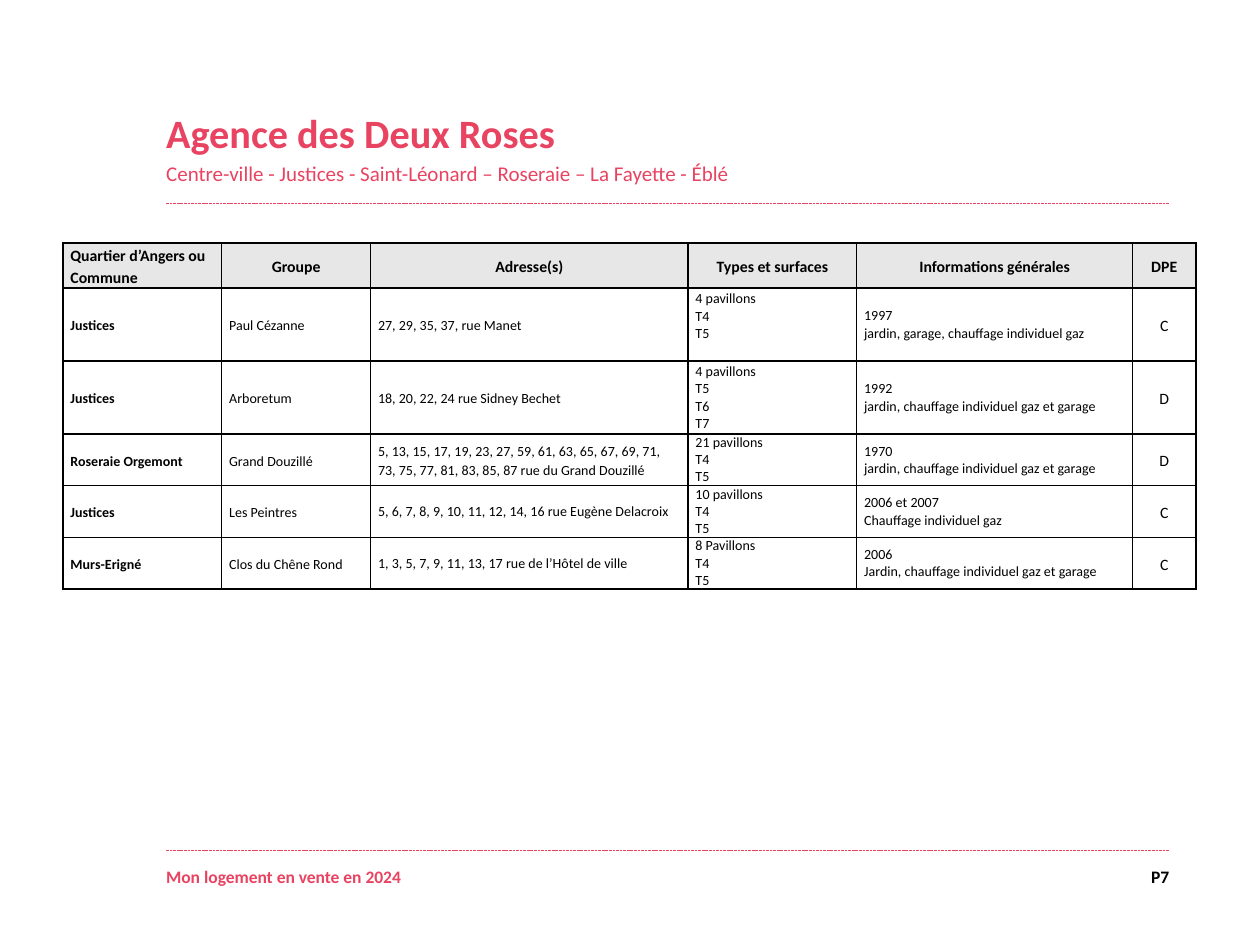
import dataclasses

import lxml.etree
import pptx
import pptx.dml.color
import pptx.enum.dml
import pptx.enum.shapes
import pptx.enum.text
import pptx.oxml.ns
import pptx.util

Cm = pptx.util.Cm
Pt = pptx.util.Pt
Align = pptx.enum.text.PP_ALIGN
Anchor = pptx.enum.text.MSO_ANCHOR


@dataclasses.dataclass(frozen=True)
class Theme:
    font: str = "Calibri"
    accent: str = "E94362"
    ink: str = "000000"
    header_fill: str = "E7E7E7"
    title_size: float = 23
    subtitle_size: float = 12
    footer_size: float = 10
    header_size: float = 9
    cell_size: float = 8
    rule_width: float = 0.5
    border_width: float = 1


LEFT, RIGHT = 3.35, 23.57
FOOTER_TOP, FOOTER_HEIGHT = 17.45, 0.51
PAGE_NUMBER_WIDTH = 0.86
LINE_HEIGHT = 0.34

HEADERS = ["Quartier d’Angers ou Commune", "Groupe", "Adresse(s)",
           "Types et surfaces", "Informations générales", "DPE"]
HOUSING = [
    ["Justices", "Paul Cézanne", "27, 29, 35, 37, rue Manet",
     "4 pavillons\nT4\nT5", "1997\njardin, garage, chauffage individuel gaz", "C"],
    ["Justices", "Arboretum", "18, 20, 22, 24 rue Sidney Bechet",
     "4 pavillons\nT5\nT6\nT7", "1992\njardin, chauffage individuel gaz et garage", "D"],
    ["Roseraie Orgemont", "Grand Douzillé",
     "5, 13, 15, 17, 19, 23, 27, 59, 61, 63, 65, 67, 69, 71, "
     "73, 75, 77, 81, 83, 85, 87 rue du Grand Douzillé",
     "21 pavillons\nT4\nT5", "1970\njardin, chauffage individuel gaz et garage", "D"],
    ["Justices", "Les Peintres", "5, 6, 7, 8, 9, 10, 11, 12, 14, 16 rue Eugène Delacroix",
     "10 pavillons\nT4\nT5", "2006 et 2007\nChauffage individuel gaz", "C"],
    ["Murs-Erigné", "Clos du Chêne Rond", "1, 3, 5, 7, 9, 11, 13, 17 rue de l’Hôtel de ville",
     "8 Pavillons\nT4\nT5", "2006\nJardin, chauffage individuel gaz et garage", "C"],
]
COLUMN_WIDTHS = [3.2, 3, 6.4, 3.4, 5.56, 1.28]
ROW_HEIGHTS = [0.91, 1.47, 1.47, 0.81, 0.81, 0.81]
TYPES_COLUMN, DPE_COLUMN = 3, 5


class SlideBuilder:
    def __init__(self, slide, theme):
        self.slide = slide
        self.theme = theme

    def style(self, para, size, color, bold=False, align=Align.LEFT, spacing=1.0):
        para.alignment = align
        para.line_spacing = spacing
        para.font.name = self.theme.font
        para.font.size = Pt(size)
        para.font.bold = bold
        para.font.color.rgb = pptx.dml.color.RGBColor.from_string(color)

    def place(self, shape, left, top, width, height, anchor=Anchor.TOP):
        shape.left, shape.top = Cm(left), Cm(top)
        shape.width, shape.height = Cm(width), Cm(height)
        frame = shape.text_frame
        frame.margin_left = frame.margin_right = 0
        frame.margin_top = frame.margin_bottom = 0
        frame.word_wrap = True
        frame.auto_size = pptx.enum.text.MSO_AUTO_SIZE.NONE
        frame.vertical_anchor = anchor
        return frame

    def heading(self, title, subtitle):
        frame = self.place(self.slide.shapes.title, LEFT, 1.85, 15.85, 1.9, Anchor.BOTTOM)
        frame.text = f"{title}\n{subtitle}"
        title_para, subtitle_para = frame.paragraphs
        self.style(title_para, self.theme.title_size, self.theme.accent, bold=True)
        self.style(subtitle_para, self.theme.subtitle_size, self.theme.accent)
        subtitle_para.space_before = Pt(2.4)

    def footer(self, text):
        width = RIGHT - LEFT - PAGE_NUMBER_WIDTH
        frame = self.place(self.slide.placeholders[1], LEFT, FOOTER_TOP, width, FOOTER_HEIGHT)
        frame.text = text
        para = frame.paragraphs[0]
        properties = para._p.get_or_add_pPr()
        properties.set("marL", "0")
        properties.set("indent", "0")
        lxml.etree.SubElement(properties, pptx.oxml.ns.qn("a:buNone"))
        para.space_before = Pt(0)
        self.style(para, self.theme.footer_size, self.theme.accent, bold=True)

    def page_number(self, text):
        box = self.slide.shapes.add_textbox(0, 0, 0, 0)
        frame = self.place(box, RIGHT - PAGE_NUMBER_WIDTH, FOOTER_TOP,
                           PAGE_NUMBER_WIDTH, FOOTER_HEIGHT)
        frame.text = text
        self.style(frame.paragraphs[0], self.theme.footer_size, self.theme.ink,
                   bold=True, align=Align.RIGHT)

    def dashed_rule(self, top):
        rule = self.slide.shapes.add_connector(
            pptx.enum.shapes.MSO_CONNECTOR.STRAIGHT, Cm(LEFT), Cm(top), Cm(RIGHT), Cm(top))
        rule.line.color.rgb = pptx.dml.color.RGBColor.from_string(self.theme.accent)
        rule.line.width = Pt(self.theme.rule_width)
        rule.line.dash_style = pptx.enum.dml.MSO_LINE.SQUARE_DOT
        lxml.etree.SubElement(rule._element.spPr, pptx.oxml.ns.qn("a:effectLst"))

    def border(self, cell):
        properties = cell._tc.get_or_add_tcPr()
        for position, side in enumerate(("lnL", "lnR", "lnT", "lnB")):
            line = lxml.etree.Element(pptx.oxml.ns.qn(f"a:{side}"),
                                      w=str(Pt(self.theme.border_width)))
            fill = lxml.etree.SubElement(line, pptx.oxml.ns.qn("a:solidFill"))
            lxml.etree.SubElement(fill, pptx.oxml.ns.qn("a:srgbClr"), val=self.theme.ink)
            properties.insert(position, line)

    def cell(self, cell, text, size, bold, align, spacing, fill=None):
        cell.text = text
        cell.margin_left = cell.margin_right = Cm(0.15)
        cell.margin_top = cell.margin_bottom = 0
        cell.vertical_anchor = Anchor.MIDDLE
        for para in cell.text_frame.paragraphs:
            self.style(para, size, self.theme.ink, bold, align, spacing)
        if fill:
            cell.fill.solid()
            cell.fill.fore_color.rgb = pptx.dml.color.RGBColor.from_string(fill)
        else:
            cell.fill.background()
        self.border(cell)

    def housing_table(self, left, top, height):
        table = self.slide.shapes.add_table(
            len(ROW_HEIGHTS), len(COLUMN_WIDTHS), Cm(left), Cm(top),
            Cm(sum(COLUMN_WIDTHS)), Cm(height)).table
        table.first_row = table.horz_banding = False
        for column, width in zip(table.columns, COLUMN_WIDTHS):
            column.width = Cm(width)
        for row, row_height in zip(table.rows, ROW_HEIGHTS):
            row.height = Cm(row_height)
        for index, text in enumerate(HEADERS):
            self.cell(table.cell(0, index), text, self.theme.header_size, True,
                      Align.CENTER if index else Align.LEFT, 1.15, self.theme.header_fill)
        for row_index, row in enumerate(HOUSING, start=1):
            for index, text in enumerate(row):
                is_dpe = index == DPE_COLUMN
                single = "\n" in text or (index == 2 and row_index > 3)
                self.cell(table.cell(row_index, index), text,
                          self.theme.header_size if is_dpe else self.theme.cell_size,
                          index == 0, Align.CENTER if is_dpe else Align.LEFT,
                          1.0 if single else 1.15)
        table.cell(1, TYPES_COLUMN).margin_bottom = Cm(LINE_HEIGHT)


def main():
    deck = pptx.Presentation()
    deck.slide_width, deck.slide_height = Cm(25.4), Cm(19.05)
    page = SlideBuilder(deck.slides.add_slide(deck.slide_layouts[1]), Theme())
    page.dashed_rule(4.1)
    page.dashed_rule(17.14)
    page.page_number("P7")
    page.heading("Agence des Deux Roses",
                 "Centre-ville - Justices - Saint-Léonard – Roseraie – La Fayette - Éblé")
    page.housing_table(1.27, 4.9, 6.91)
    page.footer("Mon logement en vente en 2024")
    deck.save("out.pptx")


if __name__ == "__main__":
    main()
